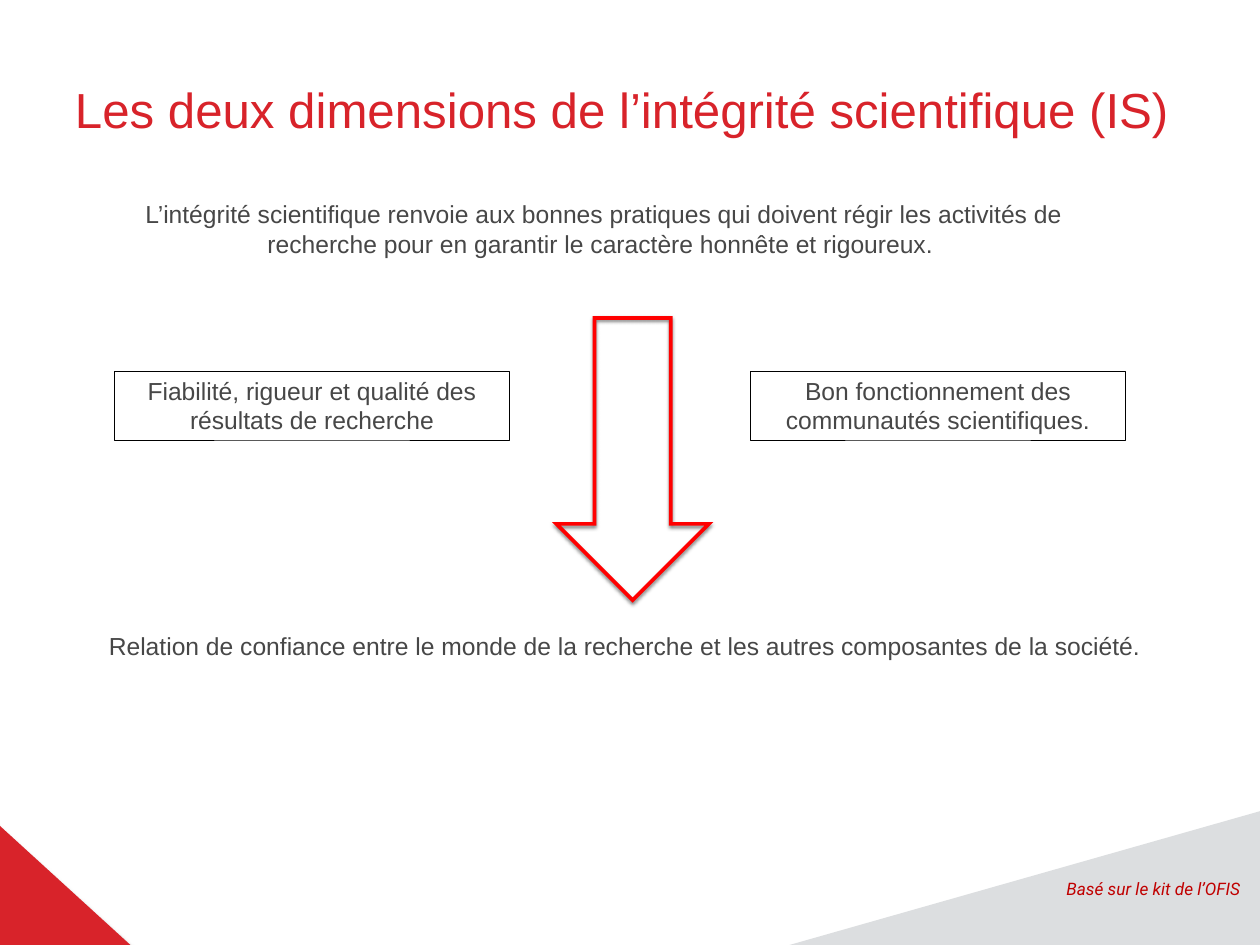
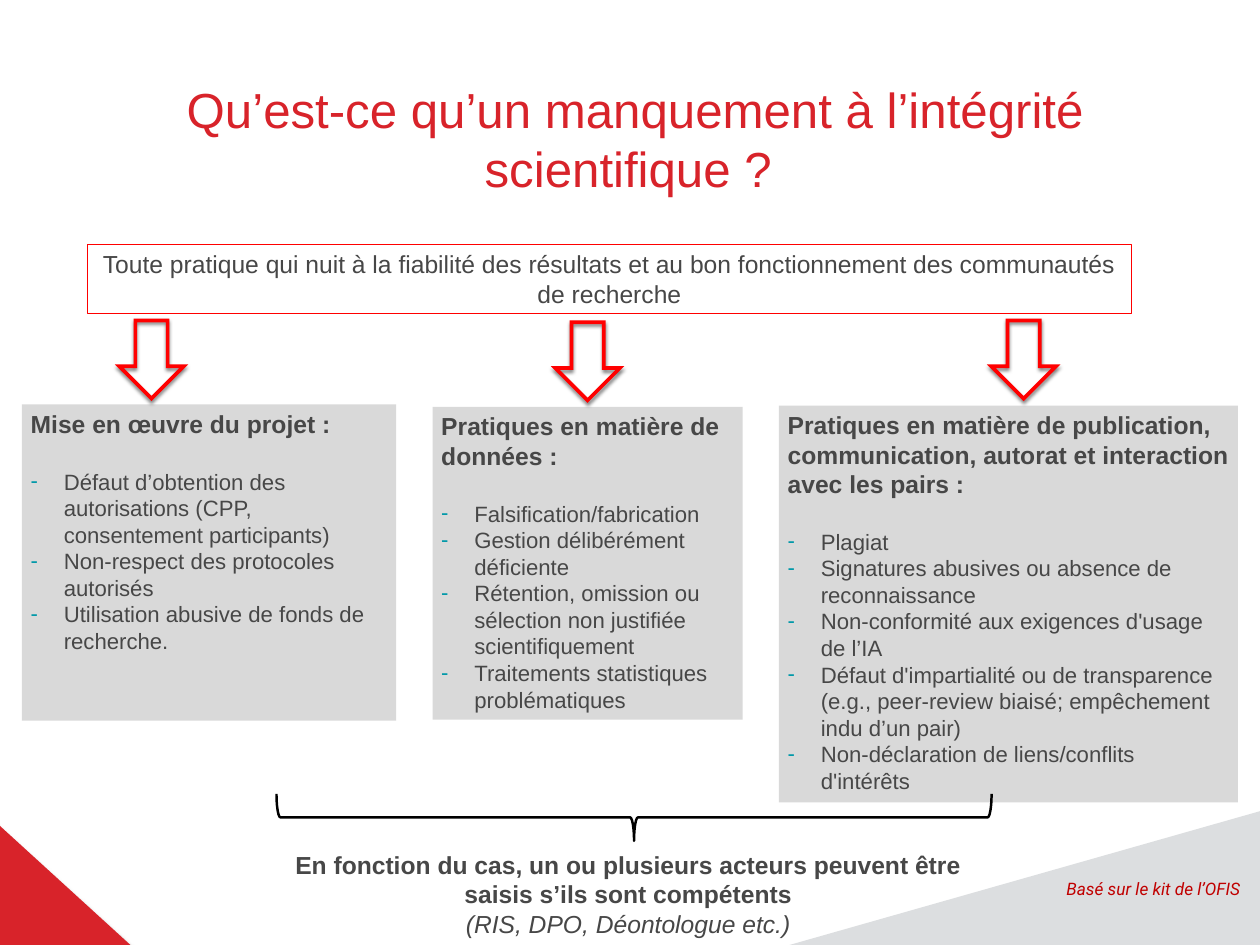
from lxml.etree import SubElement as Sub
from pptx import Presentation
from pptx.dml.color import RGBColor
from pptx.enum.shapes import MSO_SHAPE as Kind
from pptx.enum.text import MSO_ANCHOR as Anchor, PP_ALIGN as Align
from pptx.oxml.ns import qn
from pptx.util import Cm, Pt

WIDE, HIGH = 36.12, 27.1
RED, GREY, TEXT = "D8232A", "DCDEE0", "474747"
CARD, NOTE, TEAL, ARROW, BLACK = "D9D9D9", "C00000", "0099A9", "FF0000", "000000"
BODY, SMALL = 20, 18


def paint(part, color):
    """Set a font colour, or a solid fill, from a hex string."""
    if hasattr(part, "solid"):
        part.solid()
        part = part.fore_color
    else:
        part = part.color
    part.rgb = RGBColor.from_string(color)


def shade(shape):
    """Give the shape a soft shadow just below it."""
    effects = shape._element.spPr.find(qn("a:effectLst"))
    outer = Sub(effects, qn("a:outerShdw"), blurRad="38100", dist="25400",
                dir="5400000", rotWithShape="0")
    tone = Sub(outer, qn("a:srgbClr"), val=BLACK)
    Sub(tone, qn("a:alpha"), val="50000")


def style(shape, fill=None, line=None, width=0.75):
    shape.shadow.inherit = False
    if fill:
        paint(shape.fill, fill)
    else:
        shape.fill.background()
    if line:
        paint(shape.line.fill, line)
        shape.line.width = Pt(width)
    else:
        shape.line.fill.background()
    return shape


def draw(slide, kind, box, **look):
    shape = slide.shapes.add_shape(kind, *map(Cm, box))
    return style(shape, **look)


def write(shape, lines, size=BODY, color=TEXT, font="Arial", align=Align.CENTER,
          anchor=Anchor.TOP):
    """Fill the shape with one paragraph per line and return the paragraphs."""
    frame = shape.text_frame
    frame.word_wrap = True
    frame.vertical_anchor = anchor
    frame.text = "\n".join(lines)
    for para in frame.paragraphs:
        para.alignment = align
        for run in para.runs:
            run.font.size = Pt(size)
            run.font.name = font
            paint(run.font, color)
    return frame.paragraphs


def label(slide, box, *lines, **look):
    shape = slide.shapes.add_textbox(*map(Cm, box))
    return write(shape, lines, **look)


def frame(slide, box, text, line=BLACK):
    write(draw(slide, Kind.RECTANGLE, box, line=line), [text])


def arrow(slide, box):
    """Draw a hollow arrow with sharp corners."""
    shape = draw(slide, Kind.DOWN_ARROW, box, line=ARROW, width=3)
    outline = shape._element.spPr.find(qn("a:ln"))
    Sub(outline, qn("a:miter"), lim="800000")
    shade(shape)


def wedge(slide, points, color):
    """Draw a corner area that bleeds off the slide."""
    start, *rest = [(Cm(x), Cm(y)) for x, y in points]
    maker = slide.shapes.build_freeform(*start)
    maker.add_line_segments(rest, close=True)
    return style(maker.convert_to_shape(), fill=color)


def base(deck, title, rows=1, align=Align.CENTER):
    """Add a slide with its corners, title and credit."""
    slide = deck.slides.add_slide(deck.slide_layouts[6])
    shade(wedge(slide, [(-32.41, 27.23), (3.88, 27.23), (-25.98, -0.03),
                        (-32.49, -0.03)], RED))
    wedge(slide, [(46.36, 20.35), (7.8, 31.32), (7.67, 35.08), (46.41, 35.08)],
          GREY)
    head = slide.shapes.add_textbox(
        *map(Cm, (2.05, 2.17, 32.31, 0.23 + 1.7 * rows)))
    write(head, [title], size=40, color=RED, align=align)
    area = head.text_frame
    area.margin_left = area.margin_right = Cm(0.1)
    area.margin_top = area.margin_bottom = Cm(0.11)
    credit, = label(slide, (29.97, 24.97, 5.84, 1.02), "Basé sur le kit de l’OFIS",
                    size=14, color=NOTE, font="Roboto", align=Align.RIGHT,
                    anchor=Anchor.MIDDLE)
    credit.runs[0].font.italic = True
    return slide


def dash(para):
    props = para._p.get_or_add_pPr()
    props.set("marL", str(Cm(0.95)))
    props.set("indent", str(-Cm(0.95)))
    tint = Sub(props, qn("a:buClr"))
    Sub(tint, qn("a:srgbClr"), val=TEAL)
    Sub(props, qn("a:buFont"), typeface="Arial")
    Sub(props, qn("a:buChar"), char="-")


def card(slide, box, head, items):
    shape = draw(slide, Kind.RECTANGLE, box, fill=CARD)
    first, *rest = write(shape, [head, *items], align=Align.LEFT)
    first.runs[0].font.bold = True
    first.space_after = Pt(24)
    for para in rest:
        para.runs[0].font.size = Pt(SMALL)
        dash(para)


def aims(deck):
    slide = base(deck, "Les deux dimensions de l’intégrité scientifique (IS)",
                 align=Align.LEFT)
    label(slide, (2.34, 5.59, 29.95, 1.96),
          "L’intégrité scientifique renvoie aux bonnes pratiques qui doivent régir "
          "les activités de recherche pour en garantir le caractère honnête et "
          "rigoureux. ")
    label(slide, (2.87, 17.98, 30.38, 1.12),
          "Relation de confiance entre le monde de la recherche et les autres "
          "composantes de la société.", align=Align.LEFT)
    frame(slide, (3.28, 10.65, 11.33, 1.97),
          "Fiabilité, rigueur et qualité des résultats de recherche")
    frame(slide, (21.51, 10.65, 10.76, 1.97),
          "Bon fonctionnement des communautés scientifiques.")
    arrow(slide, (15.95, 9.12, 4.37, 8.09))


CARDS = [
    ((0.63, 11.6, 10.73, 9.07), "Mise en œuvre du projet :", [
        "Défaut d’obtention des autorisations (CPP, consentement participants)",
        "Non-respect des protocoles autorisés",
        "Utilisation abusive de fonds de recherche."]),
    ((12.4, 11.67, 8.89, 8.97), "Pratiques en matière de données :", [
        "Falsification/fabrication",
        "Gestion délibérément déficiente",
        "Rétention, omission ou sélection non justifiée scientifiquement",
        "Traitements statistiques problématiques"]),
    ((22.33, 11.63, 13.16, 11.38),
     "Pratiques en matière de publication, communication, autorat et interaction "
     "avec les pairs :", [
         "Plagiat",
         "Signatures abusives ou absence de reconnaissance",
         "Non-conformité aux exigences d'usage de l’IA",
         "Défaut d'impartialité ou de transparence (e.g., peer-review biaisé; "
         "empêchement indu d’un pair)",
         "Non-déclaration de liens/conflits d'intérêts"]),
]


def breach(deck):
    slide = base(deck, "Qu’est-ce qu’un manquement à l’intégrité scientifique ? ",
                 rows=2)
    frame(slide, (2.5, 7.02, 29.94, 1.97),
          "Toute pratique qui nuit à la fiabilité des résultats et au bon "
          "fonctionnement des communautés de recherche", line=ARROW)
    for i, (box, head, items) in enumerate(CARDS):
        card(slide, box, head, items)
        arrow(slide, (3.42 + 12.5 * i, 9.19 + 0.05 * (i % 2), 1.85, 2.24))
    brace = draw(slide, Kind.RIGHT_BRACE, (17.5, 13.19, 1.35, 20.5),
                 line=BLACK, width=2)
    brace.rotation = 90
    bold, slant = label(
        slide, (7.29, 24.24, 21.44, 2.82),
        "En fonction du cas, un ou plusieurs acteurs peuvent être saisis s’ils sont "
        "compétents", "(RIS, DPO, Déontologue etc.)")
    bold.runs[0].font.bold = True
    slant.runs[0].font.italic = True


def main():
    deck = Presentation()
    deck.slide_width, deck.slide_height = Cm(WIDE), Cm(HIGH)
    aims(deck)
    breach(deck)
    deck.save("out.pptx")


if __name__ == "__main__":
    main()
